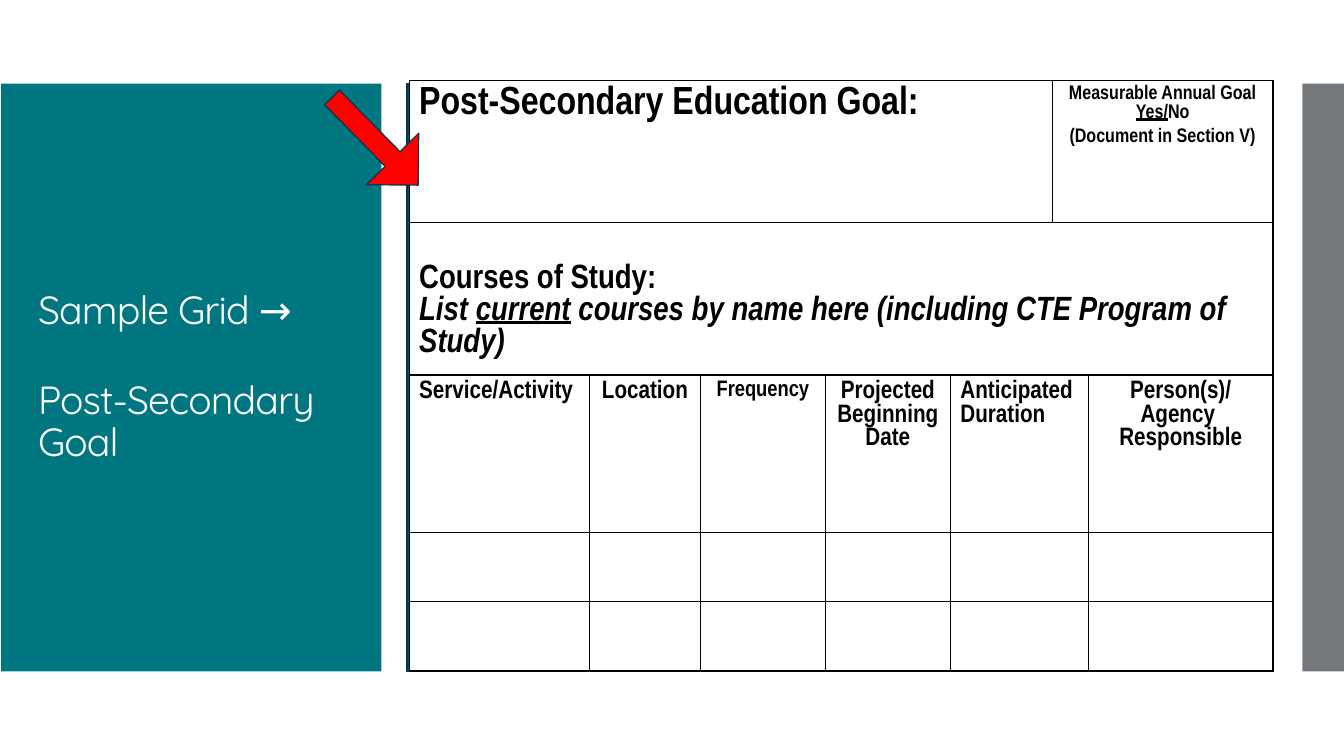
from lxml.etree import SubElement
from pptx import Presentation
from pptx.dml.color import RGBColor
from pptx.enum.shapes import MSO_SHAPE as SHAPE
from pptx.enum.text import MSO_ANCHOR as ANCHOR, PP_ALIGN as ALIGN
from pptx.oxml.ns import qn
from pptx.util import Cm, Pt

COLORS = {
    "teal": "007681", "navy": "004976", "outline": "003657", "gray": "75787B",
    "red": "FF0000", "white": "FFFFFF", "black": "000000",
}
COLS = [4.55, 2.79, 3.15, 3.15, 2.57, 0.91, 4.65]
ROWS = [3.58, 3.84, 3.96, 1.75, 1.75]
HEADINGS = [
    (0, ["Service/Activity"], 18, ALIGN.LEFT),
    (1, ["Location"], 18, ALIGN.CENTER),
    (2, ["Frequency"], 16, ALIGN.CENTER),
    (3, ["Projected", "Beginning", "Date"], 18, ALIGN.CENTER),
    (4, ["Anticipated", "Duration"], 18, ALIGN.LEFT),
    (6, ["Person(s)/ Agency \vResponsible"], 18, ALIGN.CENTER),
]


def rgb(name):
    return RGBColor.from_string(COLORS[name])


def add_block(slide, kind, box, fill, line=None):
    sp = slide.shapes.add_shape(kind, *map(Cm, box))
    sp.shadow.inherit = False
    sp.fill.solid()
    sp.fill.fore_color.rgb = rgb(fill)
    if line:
        sp.line.color.rgb = rgb(line)
        sp.line.width = Pt(0.85)
    else:
        sp.line.fill.background()
    return sp


def style(p, face, size, color, bold=False, align=ALIGN.LEFT):
    p.alignment = align
    p.font.name = face
    p.font.size = Pt(size)
    p.font.bold = bold
    p.font.color.rgb = rgb(color)


def write_cell(cell, lines, size, align=ALIGN.LEFT):
    tf = cell.text_frame
    for i, line in enumerate(lines):
        p = tf.add_paragraph() if i else tf.paragraphs[0]
        style(p, "Arial Narrow", size, "black", True, align)
        if isinstance(line, str):
            p.text = line
            continue
        for text, underlined in line:
            r = p.add_run()
            r.text = text
            r.font.underline = underlined
    return tf


def format_cell(cell, bottom):
    tcPr = cell._tc.get_or_add_tcPr()
    for tag, width in (("lnL", 1), ("lnR", 1), ("lnT", 1), ("lnB", bottom)):
        ln = SubElement(tcPr, qn(f"a:{tag}"), w=str(Pt(width)))
        fill = SubElement(ln, qn("a:solidFill"))
        SubElement(fill, qn("a:srgbClr"), val=COLORS["black"])
    cell.fill.solid()
    cell.fill.fore_color.rgb = rgb("white")


def add_title_panel(slide, left, top, width, height):
    add_block(slide, SHAPE.RECTANGLE, (left, top, width, height), "teal")
    box = (left + 0.68, top + 1.01, width - 1.4, height - 2.02)
    tf = slide.shapes.add_textbox(*map(Cm, box)).text_frame
    tf.word_wrap = True
    tf.vertical_anchor = ANCHOR.MIDDLE
    for i, text in enumerate(["Sample Grid →", "Post-Secondary\vGoal"]):
        p = tf.add_paragraph() if i else tf.paragraphs[0]
        p.text = text
        style(p, "Quicksand", 28, "white")
        p.line_spacing = 0.9
        p.space_before = Pt(34 * i)
        for r in p.runs:
            r._r.get_or_add_rPr().set("spc", "-60")


def add_goal_grid(slide, left, top, width, height):
    add_block(slide, SHAPE.RECTANGLE, (left, top, width, height), "navy", "outline")
    box = (left + 0.05, top - 0.08, sum(COLS), sum(ROWS))
    table = slide.shapes.add_table(len(ROWS), len(COLS), *map(Cm, box)).table
    table.first_row = table.horz_banding = False
    for col, size in zip(table.columns, COLS):
        col.width = Cm(size)
    for i, (row, size) in enumerate(zip(table.rows, ROWS)):
        row.height = Cm(size)
        for cell in row.cells:
            format_cell(cell, 2 if i == len(ROWS) - 1 else 1)

    spans = [(0, 0, 4), (0, 5, 6), (1, 0, 6)] + [(i, 4, 5) for i in (2, 3, 4)]
    for row, first, last in spans:
        table.cell(row, first).merge(table.cell(row, last))

    write_cell(table.cell(0, 0), ["Post-Secondary Education Goal:"], 28)
    annual = ["Measurable Annual Goal", [("Yes/", True), ("No", False)],
              "(Document in Section V)"]
    tf = write_cell(table.cell(0, 5), annual, 14, ALIGN.CENTER)
    tf.paragraphs[2].space_before = Pt(4)

    courses = table.cell(1, 0)
    courses.vertical_anchor = ANCHOR.BOTTOM
    courses.margin_bottom = Cm(0.4)
    listing = [("List ", False), ("current", True),
               (" courses by name here (including CTE Program of Study)", False)]
    tf = write_cell(courses, ["Courses of Study:", listing], 24)
    tf.paragraphs[1].font.italic = True

    for col, lines, size, align in HEADINGS:
        write_cell(table.cell(2, col), lines, size, align)


def add_pointer(slide, left, top, width, height):
    sp = add_block(slide, SHAPE.DOWN_ARROW, (left, top, width, height), "red", "outline")
    sp.adjustments[0] = 0.286
    sp.adjustments[1] = 0.5
    sp.rotation = 315.5


def main():
    prs = Presentation()
    prs.slide_width, prs.slide_height = Cm(33.87), Cm(19.05)
    slide = prs.slides.add_slide(prs.slide_layouts[6])
    top, height = 2.11, 14.81
    add_title_panel(slide, 0.03, top, 9.58, height)
    add_block(slide, SHAPE.RECTANGLE, (32.82, top, 1.05, height), "gray")
    add_goal_grid(slide, 10.26, top, 21.84, height)
    add_pointer(slide, 8.53, 2.01, 1.85, 3.1)
    prs.save("out.pptx")


if __name__ == "__main__":
    main()
